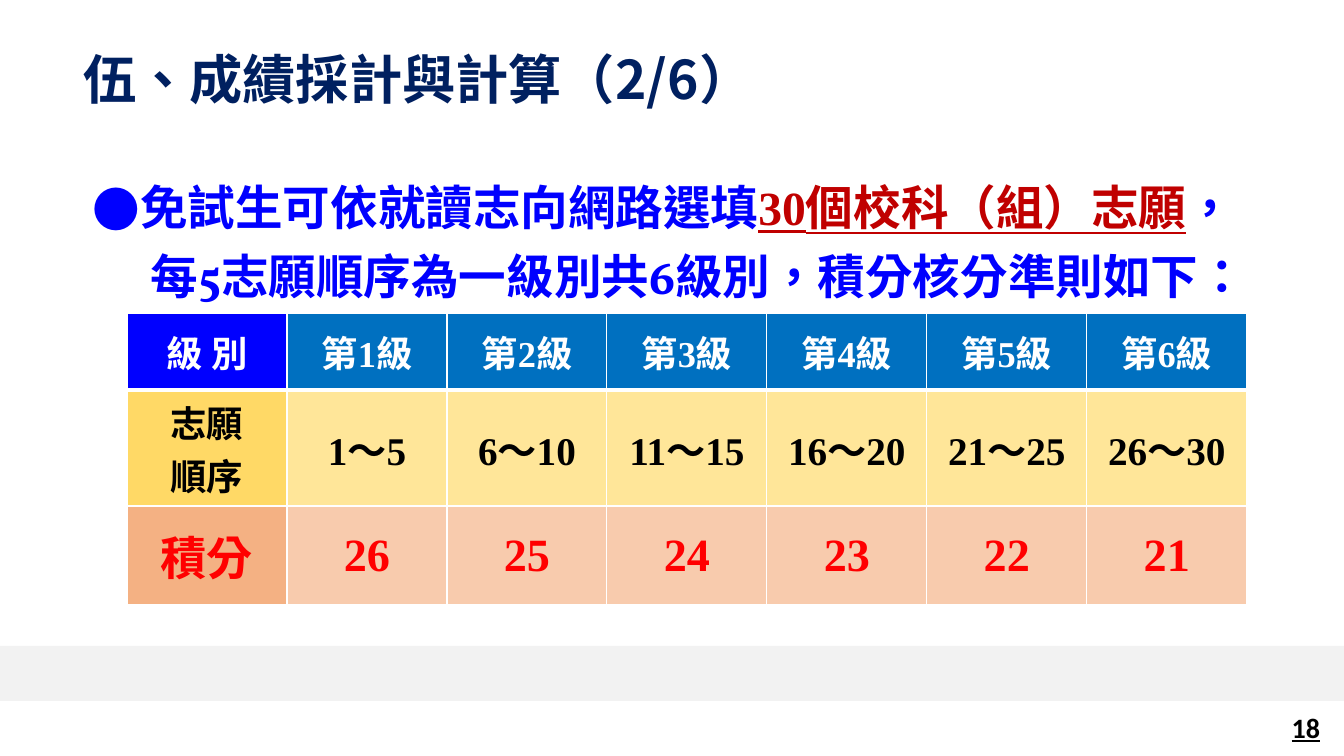
from lxml.etree import SubElement
from pptx import Presentation
from pptx.dml.color import RGBColor
from pptx.enum.lang import MSO_LANGUAGE_ID
from pptx.enum.shapes import MSO_SHAPE
from pptx.enum.text import MSO_ANCHOR, PP_ALIGN
from pptx.oxml.ns import qn
from pptx.util import Pt

SCALE = 914400 / 100.8
SERIF, SANS, OLD_STYLE = "Times New Roman", "Noto Sans CJK SC", "Vollkorn"
COLORS = {
    "navy": "002060", "blue": "0000FF", "crimson": "C00000", "red": "FF0000",
    "black": "000000", "white": "FFFFFF", "band": "F2F2F2", "level": "0070C0",
    "order_head": "FFD966", "order": "FFE699", "score_head": "F4B183", "score": "F8CBAD",
}


def px(length):
    return round(length * SCALE)


def box_px(*box):
    return [px(length) for length in box]


def rgb(name):
    return RGBColor.from_string(COLORS[name])


def format_run(run, size, face, color, underline=False):
    font = run.font
    font.size, font.name, font.bold = Pt(size), face, True
    font.underline = underline
    font.color.rgb = rgb(color)
    font.language_id = MSO_LANGUAGE_ID.TRADITIONAL_CHINESE
    latin = run._r.rPr.find(qn("a:latin"))
    east_asian = SubElement(run._r.rPr, qn("a:ea"), typeface=SANS)
    latin.addnext(east_asian)


def set_indent(paragraph, left, first, bullet=None):
    properties = paragraph._p.get_or_add_pPr()
    properties.set("marL", str(px(left)))
    properties.set("indent", str(px(first)))
    if bullet:
        SubElement(properties, qn("a:buFont"), typeface=SANS)
        SubElement(properties, qn("a:buChar"), char=bullet)
    else:
        SubElement(properties, qn("a:buNone"))


def set_border(cell, side, width):
    line = SubElement(cell._tc.get_or_add_tcPr(), qn(f"a:{side}"), w=str(Pt(width)))
    SubElement(SubElement(line, qn("a:solidFill")), qn("a:srgbClr"), val=COLORS["white"])


def add_heading(slide, left, top, width, height):
    heading = slide.shapes.title
    heading.left, heading.top, heading.width, heading.height = box_px(left, top, width, height)
    frame = heading.text_frame
    frame.text = "伍、成績採計與計算（2/6）"
    frame.vertical_anchor = MSO_ANCHOR.MIDDLE
    frame.margin_left = px(24)
    paragraph = frame.paragraphs[0]
    paragraph.alignment = PP_ALIGN.LEFT
    paragraph.line_spacing = 0.9
    format_run(paragraph.runs[0], 38, SANS, "navy")


def add_rule(slide, left, top, width, height):
    frame = slide.shapes.add_textbox(*box_px(left, top, width, height)).text_frame
    frame.word_wrap = True
    lines = [
        (40, -40, "●", [("免試生可依就讀志向網路選填", SERIF, "blue", False),
                        ("30個校科（組）志願", SERIF, "crimson", True),
                        ("，", SERIF, "blue", False)]),
        (58, 0, None, [("每5志願順序為一級別共6級別", OLD_STYLE, "blue", False),
                       ("，積分核分準則如下：", SERIF, "blue", False)]),
    ]
    for index, (indent, first, bullet, parts) in enumerate(lines):
        paragraph = frame.add_paragraph() if index else frame.paragraphs[0]
        paragraph.line_spacing = 1.2
        set_indent(paragraph, indent, first, bullet)
        for text, face, color, underline in parts:
            run = paragraph.add_run()
            run.text = text
            format_run(run, 34, face, color, underline)


def add_score_table(slide, left, top, width, height):
    levels = range(1, 7)
    rows = [
        (77, ["級 別"] + [f"第{level}級" for level in levels],
         ("blue", "level"), "white", (26, 26)),
        (116, ["志願\n順序"] + [f"{5 * level - 4}～{5 * level}" for level in levels],
         ("order_head", "order"), "black", (26, 28)),
        (99, ["積分"] + [str(27 - level) for level in levels],
         ("score_head", "score"), "red", (33, 33)),
    ]
    table = slide.shapes.add_table(3, 7, *box_px(left, top, width, height)).table
    for column in table.columns:
        column.width = px(width / 7)
    for row_index, (row_height, texts, fills, color, sizes) in enumerate(rows):
        table.rows[row_index].height = px(row_height)
        for column_index, text in enumerate(texts):
            kind = min(column_index, 1)
            cell = table.cell(row_index, column_index)
            cell.text = text
            cell.vertical_anchor = MSO_ANCHOR.MIDDLE
            cell.margin_left = cell.margin_right = px(4)
            for side in ("lnL", "lnR", "lnT", "lnB"):
                header_edge = (row_index, side) in ((0, "lnB"), (1, "lnT"))
                set_border(cell, side, 3 if header_edge else 1)
            cell.fill.solid()
            cell.fill.fore_color.rgb = rgb(fills[kind])
            for paragraph in cell.text_frame.paragraphs:
                paragraph.alignment = PP_ALIGN.CENTER
                format_run(paragraph.runs[0], sizes[kind], SERIF, color)


def add_footer(slide, left, top, width, height):
    band = slide.shapes.add_shape(MSO_SHAPE.RECTANGLE, *box_px(left, top, width, height))
    band.shadow.inherit = False
    band.fill.solid()
    band.fill.fore_color.rgb = rgb("band")
    band.line.fill.background()
    number_box = box_px(left + width - 316, top + height + 6, 302, 40)
    frame = slide.shapes.add_textbox(*number_box).text_frame
    frame.word_wrap = True
    frame.text = "18"
    frame.vertical_anchor = MSO_ANCHOR.MIDDLE
    paragraph = frame.paragraphs[0]
    paragraph.alignment = PP_ALIGN.RIGHT
    format_run(paragraph.runs[0], 20, "Calibri", "black", True)


def main():
    presentation = Presentation()
    presentation.slide_width, presentation.slide_height = px(1344), px(756)
    slide = presentation.slides.add_slide(presentation.slide_layouts[5])
    add_heading(slide, 59, 35, 1148, 95)
    add_rule(slide, 83, 162, 1228, 150)
    add_score_table(slide, 127, 313, 1120, 292)
    add_footer(slide, 0, 646, 1344, 55)
    presentation.save("out.pptx")


if __name__ == "__main__":
    main()
